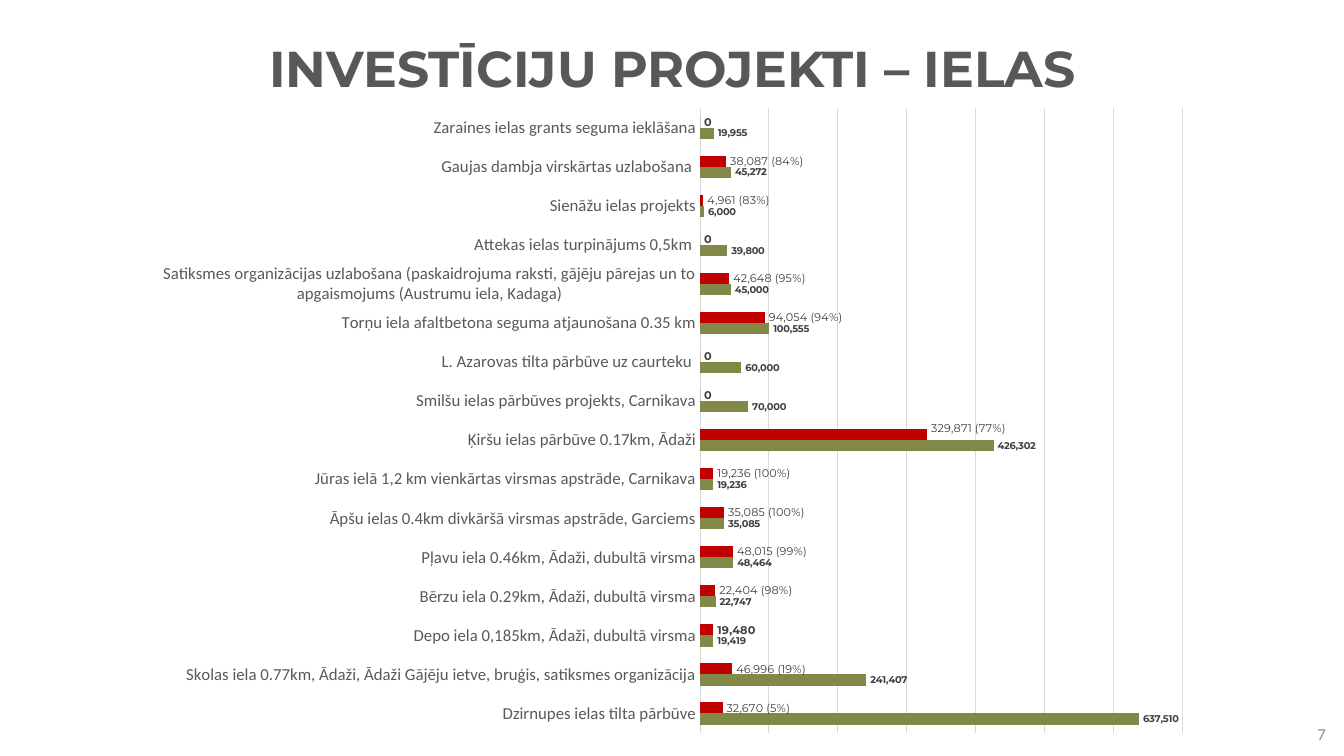
from pptx import Presentation, util as u
from pptx.chart.data import CategoryChartData
from pptx.dml.color import RGBColor
from pptx.enum import chart as ch, text
from pptx.oxml import parse_xml
from pptx.oxml.ns import nsdecls

presentation = Presentation()
presentation.slide_width = u.Inches(13.33)
presentation.slide_height = u.Inches(7.5)
slide = presentation.slides.add_slide(presentation.slide_layouts[6])


def style_font(font, name, size, color, bold=False):
    font.name = name
    font.size = u.Pt(size)
    font.bold = bold
    font.color.rgb = RGBColor.from_string(color)


def manual_layout(**values):
    parts = "".join(f'<c:{tag} val="{value}"/>' for tag, value in values.items())
    return parse_xml(f'<c:layout {nsdecls("c")}><c:manualLayout>{parts}</c:manualLayout></c:layout>')


CENTER, RIGHT = text.PP_ALIGN.CENTER, text.PP_ALIGN.RIGHT
for box, wording, alignment, spacing, font_style in [
    ((0.93, 0.35, 11.48, 0.72), "INVESTĪCIJU PROJEKTI – IELAS", CENTER, 0.9, ("Montserrat", 36, "58585B", True)),
    ((10.25, 7.08, 3, 0.4), "7", RIGHT, 1.0, ("Calibri", 12, "8C8C8C")),
]:
    shape = slide.shapes.add_textbox(*map(u.Inches, box))
    shape.text_frame.word_wrap = True
    shape.text_frame.vertical_anchor = text.MSO_ANCHOR.MIDDLE
    paragraph = shape.text_frame.paragraphs[0]
    paragraph.alignment = alignment
    paragraph.line_spacing = spacing
    run = paragraph.add_run()
    run.text = wording
    style_font(run.font, *font_style)

projects = [
    ("Dzirnupes ielas tilta pārbūve", 637510, 32670, "5%"),
    ("Skolas iela 0.77km, Ādaži, Ādaži Gājēju ietve, bruģis, satiksmes organizācija", 241407, 46996, "19%"),
    ("Depo iela 0,185km, Ādaži, dubultā virsma", 19419, 19480, None),
    ("Bērzu iela 0.29km, Ādaži, dubultā virsma", 22747, 22404, "98%"),
    ("Pļavu iela 0.46km, Ādaži, dubultā virsma", 48464, 48015, "99%"),
    ("Āpšu ielas 0.4km divkāršā virsmas apstrāde, Garciems", 35085, 35085, "100%"),
    ("Jūras ielā 1,2 km vienkārtas virsmas apstrāde, Carnikava", 19236, 19236, "100%"),
    ("Ķiršu ielas pārbūve 0.17km, Ādaži", 426302, 329871, "77%"),
    ("Smilšu ielas pārbūves projekts, Carnikava", 70000, 0, None),
    ("L. Azarovas tilta pārbūve uz caurteku ", 60000, 0, None),
    ("Torņu iela afaltbetona seguma atjaunošana 0.35 km", 100555, 94054, "94%"),
    ("Satiksmes organizācijas uzlabošana (paskaidrojuma raksti, gājēju pārejas un to "
     "apgaismojums (Austrumu iela, Kadaga)", 45000, 42648, "95%"),
    ("Attekas ielas turpinājums 0,5km ", 39800, 0, None),
    ("Sienāžu ielas projekts", 6000, 4961, "83%"),
    ("Gaujas dambja virskārtas uzlabošana ", 45272, 38087, "84%"),
    ("Zaraines ielas grants seguma ieklāšana", 19955, 0, None),
]
names, planned, spent, shares = zip(*projects)

chart_data = CategoryChartData(number_format="#,##0")
chart_data.categories = names
chart_data.add_series("Series 1", planned)
chart_data.add_series("Series 2", spent)
chart = slide.shapes.add_chart(
    ch.XL_CHART_TYPE.BAR_CLUSTERED, *map(u.Inches, (1.41, 0.94, 10.53, 6.47)), chart_data
).chart
chart.has_legend = False
chart.has_title = False
style_font(chart.font, "Calibri", 10, "000000")

category_axis = chart.category_axis
category_axis.major_tick_mark = ch.XL_TICK_MARK.NONE
category_axis.format.line.fill.background()
style_font(category_axis.tick_labels.font, "Calibri", 12, "595959")

value_axis = chart.value_axis
value_axis.visible = False
value_axis.minimum_scale = 0
value_axis.maximum_scale = 700000
value_axis.major_unit = 100000
value_axis.has_major_gridlines = True
gridline = value_axis.major_gridlines.format.line
gridline.width = u.Pt(0.75)
gridline.color.rgb = RGBColor.from_string("D9D9D9")

plot = chart.plots[0]
plot.gap_width = 150
plot.vary_by_categories = False
for series, color, label_size in zip(plot.series, ("828847", "C00000"), (7, 8)):
    series.format.fill.solid()
    series.format.fill.fore_color.rgb = RGBColor.from_string(color)
    series.invert_if_negative = False
    labels = series.data_labels
    labels.show_value = True
    labels.number_format = "#,##0"
    labels.number_format_is_linked = False
    labels.position = ch.XL_LABEL_POSITION.OUTSIDE_END
    style_font(labels.font, "Montserrat", label_size, "404040", True)

for index, (amount, share) in enumerate(zip(spent, shares)):
    if share:
        label = plot.series[1].points[index].data_label
        run = label.text_frame.paragraphs[0].add_run()
        run.text = f"{amount:,} ({share})"
        style_font(run.font, "Montserrat", 8, "404040")
        label.position = ch.XL_LABEL_POSITION.OUTSIDE_END

chart_xml = chart.element if hasattr(chart, "element") else chart._chartSpace
raised_index = chart_xml.xpath('.//c:dLbl/c:idx[@val="7"]')[0]
raised_index.addnext(manual_layout(x=0, y=-0.01))

plot_area = chart_xml.xpath(".//c:plotArea")[0]
for layout in plot_area.xpath("./c:layout"):
    plot_area.remove(layout)
plot_area.insert(0, manual_layout(
    layoutTarget="inner", xMode="edge", yMode="edge", x=0.5256, y=0.0205, w=0.4541, h=0.9583))

presentation.save("out.pptx")
